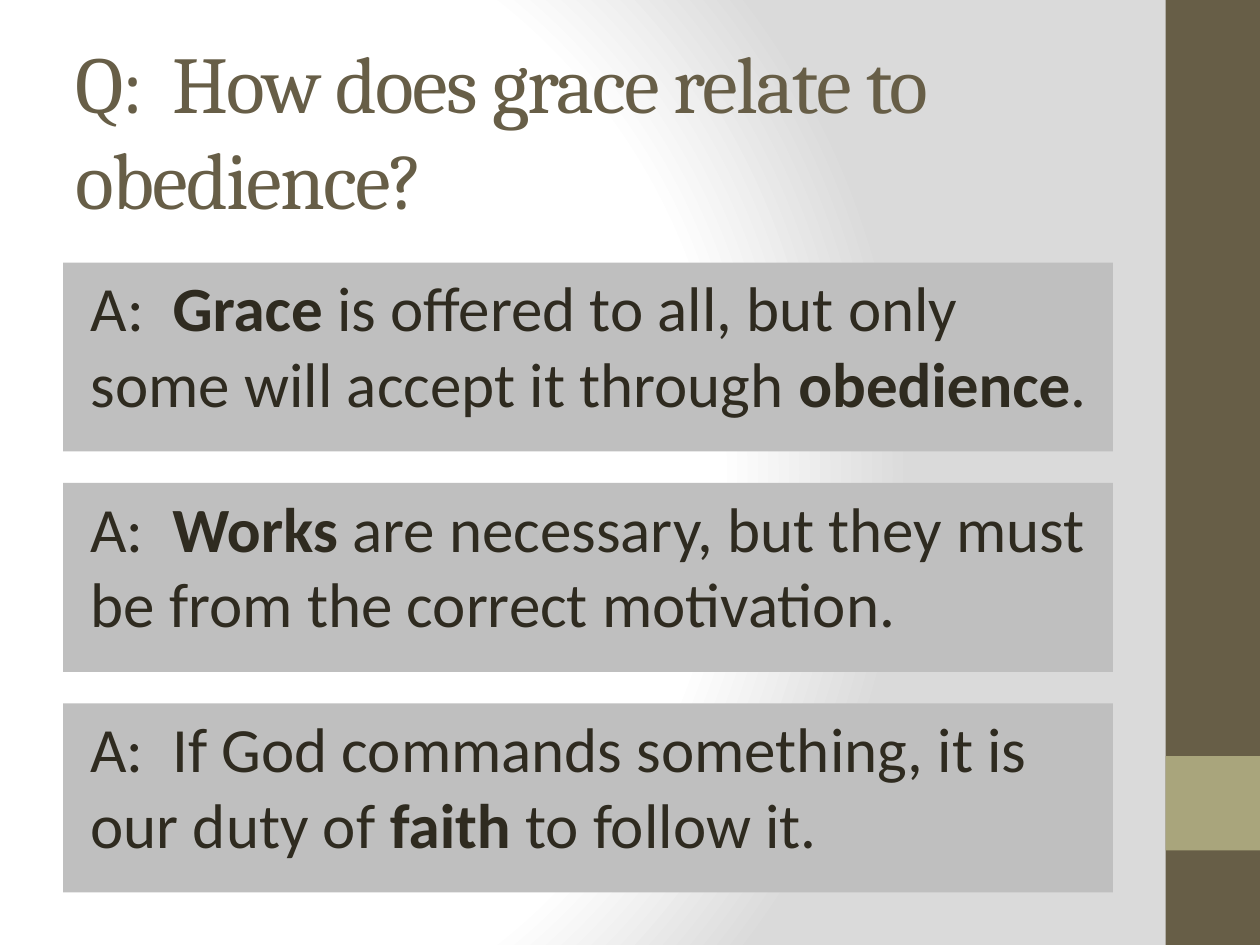
from pptx import Presentation
from pptx.dml.color import RGBColor
from pptx.enum import shapes, text
from pptx.oxml import parse_xml
from pptx.oxml.ns import nsdecls, qn
from pptx.util import Pt

BROWN = RGBColor(0x67, 0x5E, 0x47)
OLIVE = RGBColor(0xA9, 0xA5, 0x7C)
GREY = RGBColor(0xBF, 0xBF, 0xBF)
INK = RGBColor(0x2F, 0x2B, 0x20)

TITLE_FONT = {"name": "Cambria", "size": Pt(46)}
BODY_FONT = {"name": "Calibri", "size": Pt(36)}

LEFT, WIDTH = 36, 600
ANSWER_TOP, ANSWER_HEIGHT, ANSWER_STEP = 150, 108, 126

# Each answer is a list of (wording, bold) spans
ANSWERS = [
    [("A:  ", False), ("Grace", True),
     (" is offered to all, but only some will accept it through ", False),
     ("obedience", True), (".", False)],
    [("A:  ", False), ("Works ", True),
     ("are necessary, but they must be from the correct motivation.", False)],
    [("A:  If God commands something, it is our duty of ", False),
     ("faith", True), (" to follow it.", False)],
]


def add_block(page, left, top, width, height, color):
    block = page.shapes.add_shape(shapes.MSO_SHAPE.RECTANGLE,
                                  Pt(left), Pt(top), Pt(width), Pt(height))
    block.shadow.inherit = False
    block.fill.solid()
    block.fill.fore_color.rgb = color
    block.line.fill.background()
    return block


def add_span(para, wording, style, color):
    span = para.add_run()
    span.text = wording
    for name, value in style.items():
        setattr(span.font, name, value)
    span.font.color.rgb = color
    return span


deck = Presentation()
deck.slide_width, deck.slide_height = Pt(720), Pt(540)
page = deck.slides.add_slide(deck.slide_layouts[1])

# Background: radial gradient from white to light grey
page.background.fill.solid()
background = page.element.find(".//" + qn("p:bgPr"))
background.replace(background[0], parse_xml(
    f'<a:gradFill {nsdecls("a")} rotWithShape="1"><a:gsLst>'
    '<a:gs pos="0"><a:srgbClr val="FFFFFF"/></a:gs>'
    '<a:gs pos="75000"><a:srgbClr val="FFFFFF"/></a:gs>'
    '<a:gs pos="100000"><a:srgbClr val="DADADA"/></a:gs></a:gsLst>'
    '<a:path path="circle"><a:fillToRect l="20000" t="50000" r="100000" b="50000"/>'
    '</a:path></a:gradFill>'))

# Side band with its accent square
add_block(page, 666, 0, 54, 540, BROWN)
add_block(page, 666, 432, 54, 54, OLIVE)

# Question
title = page.shapes.title
title.left, title.top, title.width, title.height = Pt(LEFT), Pt(21.6), Pt(WIDTH), Pt(104.4)
title.text_frame.auto_size = text.MSO_AUTO_SIZE.NONE
title.text_frame.vertical_anchor = text.MSO_ANCHOR.MIDDLE
para = title.text_frame.paragraphs[0]
para.alignment = text.PP_ALIGN.LEFT
span = add_span(para, "Q:  How does grace relate to obedience?", TITLE_FONT, BROWN)
span.font.fill.solid()
span.font.color.rgb = BROWN
span.font._element.set("spc", "-100")

# Answers: the body placeholder first, then matching boxes
for row, answer in enumerate(ANSWERS):
    top = ANSWER_TOP + row * ANSWER_STEP
    if row == 0:
        box = page.placeholders[1]
        box.left, box.top, box.width, box.height = Pt(LEFT), Pt(top), Pt(WIDTH), Pt(ANSWER_HEIGHT)
        box.fill.solid()
        box.fill.fore_color.rgb = GREY
    else:
        box = add_block(page, LEFT, top, WIDTH, ANSWER_HEIGHT, GREY)
    frame = box.text_frame
    frame.word_wrap = True
    frame.auto_size = text.MSO_AUTO_SIZE.NONE
    frame.vertical_anchor = text.MSO_ANCHOR.TOP
    para = frame.paragraphs[0]
    para.alignment = text.PP_ALIGN.LEFT
    para.space_before = Pt(7.2)
    indent = para._p.get_or_add_pPr()
    indent.set("marL", str(Pt(8.64)))
    indent.set("indent", "0")
    indent.append(parse_xml(f'<a:buNone {nsdecls("a")}/>'))
    for wording, bold in answer:
        add_span(para, wording, {**BODY_FONT, "bold": bold}, INK)

deck.save("out.pptx")
